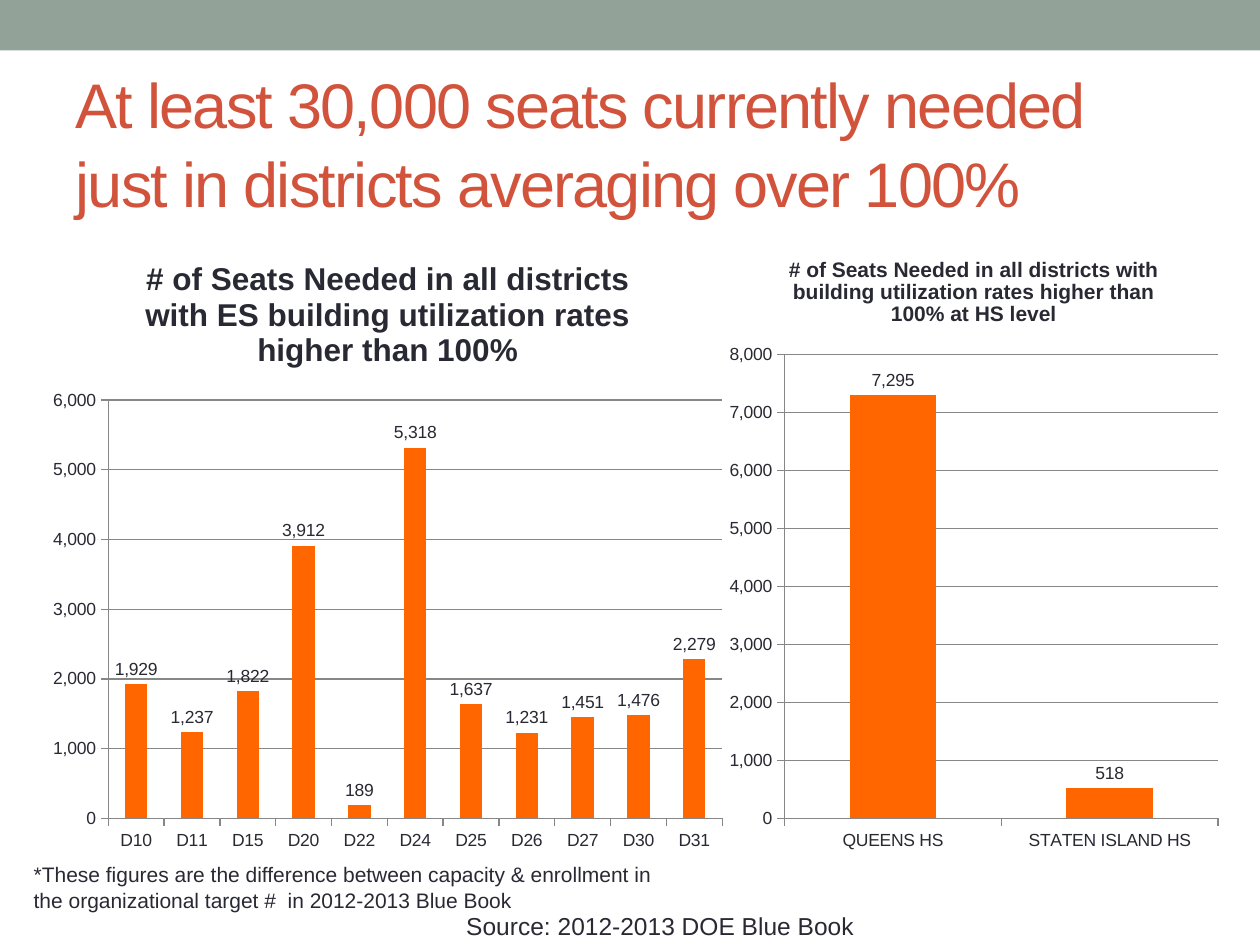
from dataclasses import dataclass

from pptx import Presentation
from pptx.chart.data import CategoryChartData
from pptx.dml.color import RGBColor
from pptx.enum.chart import XL_CHART_TYPE, XL_LABEL_POSITION, XL_TICK_MARK
from pptx.enum.shapes import MSO_SHAPE
from pptx.enum.text import MSO_ANCHOR, PP_ALIGN
from pptx.util import Cm, Pt

COLUMNS = XL_CHART_TYPE.COLUMN_CLUSTERED
OUTSIDE_END = XL_LABEL_POSITION.OUTSIDE_END
TICK_OUTSIDE = XL_TICK_MARK.OUTSIDE
RECTANGLE = MSO_SHAPE.RECTANGLE
MIDDLE = MSO_ANCHOR.MIDDLE
LEFT = PP_ALIGN.LEFT
CENTER = PP_ALIGN.CENTER

FONT = "Arial"
INK = "292934"
ACCENT = "D2533C"
BANNER = "93A299"
BAR = "FF6600"
GRID = "878787"
NUMBER_FORMAT = "#,##0"
CHART_TOP, CHART_HEIGHT = 4.7, 12.7


@dataclass
class SeatChart:
    title: str
    title_size: int
    left: float
    width: float
    maximum: int
    seats: dict[str, int]


@dataclass
class Note:
    text: str
    size: int
    left: float
    top: float
    width: float
    height: float
    alignment: PP_ALIGN


HIGH_SCHOOLS = SeatChart(
    "# of Seats Needed in all districts with building utilization rates higher than 100% at HS level",
    12, 14.5, 10.26, 8000,
    {"QUEENS HS": 7295, "STATEN ISLAND HS": 518},
)
ELEMENTARY_SCHOOLS = SeatChart(
    "# of Seats Needed in all districts with ES building utilization rates higher than 100%",
    18, 0.79, 14.05, 6000,
    {"D10": 1929, "D11": 1237, "D15": 1822, "D20": 3912, "D22": 189, "D24": 5318,
     "D25": 1637, "D26": 1231, "D27": 1451, "D30": 1476, "D31": 2279},
)
FOOTNOTE = Note(
    "*These figures are the difference between capacity & enrollment in "
    "the organizational target #  in 2012-2013 Blue Book",
    12, 0.43, 17.25, 13.61, 1.27, LEFT,
)
SOURCE = Note("Source: 2012-2013 DOE Blue Book", 14, 1.27, 18.24, 24.08, 0.86, CENTER)


def color(value: str) -> RGBColor:
    return RGBColor.from_string(value)


def format_font(font, size: int, value: str, bold: bool = False) -> None:
    font.name = FONT
    font.size = Pt(size)
    font.bold = bold
    font.color.rgb = color(value)


def draw_banner(slide) -> None:
    banner = slide.shapes.add_shape(RECTANGLE, 0, 0, Cm(25.4), Cm(1.02))
    banner.shadow.inherit = False
    banner.fill.solid()
    banner.fill.fore_color.rgb = color(BANNER)
    banner.line.fill.background()


def draw_title(slide, text: str) -> None:
    title = slide.shapes.title
    title.left, title.top, title.width, title.height = Cm(1.27), Cm(1.47), Cm(22.86), Cm(2.74)
    frame = title.text_frame
    frame.text = text
    frame.vertical_anchor = MIDDLE
    paragraph = frame.paragraphs[0]
    paragraph.alignment = LEFT
    paragraph.line_spacing = 1.05
    run = paragraph.runs[0]
    format_font(run.font, 36, ACCENT)
    run.font._element.set("spc", "-100")


def draw_note(slide, note: Note) -> None:
    box = slide.shapes.add_textbox(Cm(note.left), Cm(note.top), Cm(note.width), Cm(note.height))
    frame = box.text_frame
    frame.word_wrap = True
    frame.text = note.text
    paragraph = frame.paragraphs[0]
    paragraph.alignment = note.alignment
    format_font(paragraph.runs[0].font, note.size, INK)


def draw_chart(slide, seat_chart: SeatChart) -> None:
    data = CategoryChartData(number_format=NUMBER_FORMAT)
    data.categories = list(seat_chart.seats)
    data.add_series("Series 1", list(seat_chart.seats.values()))
    chart = slide.shapes.add_chart(
        COLUMNS, Cm(seat_chart.left), Cm(CHART_TOP), Cm(seat_chart.width), Cm(CHART_HEIGHT), data
    ).chart
    format_font(chart.font, 10, INK)
    chart.has_legend = False
    chart.has_title = True
    title_frame = chart.chart_title.text_frame
    title_frame.text = seat_chart.title
    format_font(title_frame.paragraphs[0].runs[0].font, seat_chart.title_size, INK, bold=True)
    chart.chart_title.include_in_layout = False

    for axis in (chart.category_axis, chart.value_axis):
        axis.major_tick_mark = TICK_OUTSIDE
        axis.format.line.color.rgb = color(GRID)
        axis.format.line.width = Pt(0.75)
    values = chart.value_axis
    values.minimum_scale = 0
    values.maximum_scale = seat_chart.maximum
    values.major_unit = 1000
    values.tick_labels.number_format = NUMBER_FORMAT
    values.tick_labels.number_format_is_linked = False
    values.has_major_gridlines = True
    values.major_gridlines.format.line.color.rgb = color(GRID)
    values.major_gridlines.format.line.width = Pt(0.75)

    plot = chart.plots[0]
    plot.gap_width = 150
    plot.vary_by_categories = False
    series = plot.series[0]
    series.format.fill.solid()
    series.format.fill.fore_color.rgb = color(BAR)
    labels = series.data_labels
    labels.show_value = True
    labels.number_format = NUMBER_FORMAT
    labels.number_format_is_linked = False
    labels.position = OUTSIDE_END
    format_font(labels.font, 10, INK)


def main() -> None:
    presentation = Presentation()
    presentation.slide_width = Cm(25.4)
    presentation.slide_height = Cm(19.05)
    slide = presentation.slides.add_slide(presentation.slide_layouts[5])
    draw_banner(slide)
    draw_title(slide, "At least 30,000 seats currently needed just in districts averaging over 100%")
    draw_chart(slide, HIGH_SCHOOLS)
    draw_note(slide, FOOTNOTE)
    draw_chart(slide, ELEMENTARY_SCHOOLS)
    draw_note(slide, SOURCE)
    presentation.save("out.pptx")


if __name__ == "__main__":
    main()
